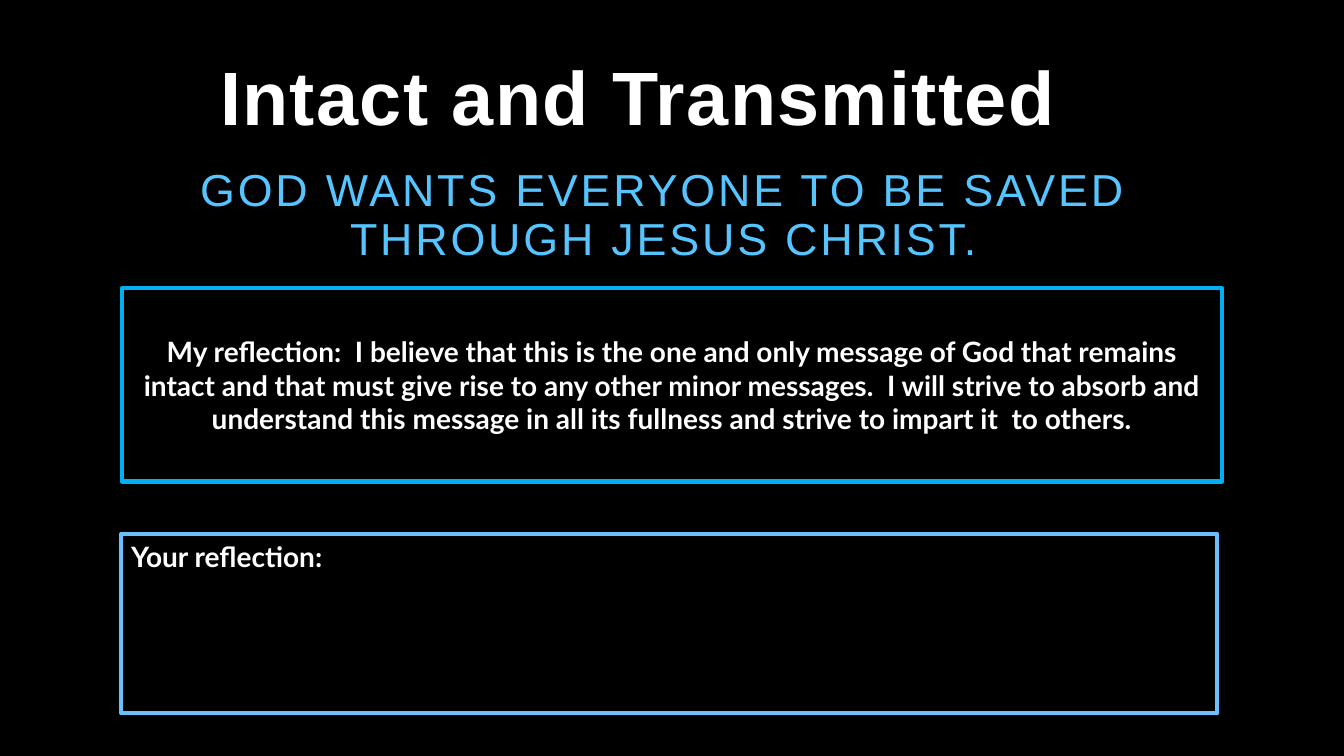
"""Builds the reflection slide "Intact and Transmitted"."""
import pptx
import pptx.dml.color
import pptx.enum.shapes
import pptx.enum.text
import pptx.util

Pt = pptx.util.Pt
ALIGN = pptx.enum.text.PP_ALIGN
ANCHOR = pptx.enum.text.MSO_ANCHOR


def color(value):
    """Turn a hex string into a colour."""
    return pptx.dml.color.RGBColor.from_string(value)


def write(tf, text, font="Lato", size=20, fill="FFFFFF", bold=False,
          align=ALIGN.LEFT, anchor=ANCHOR.TOP, leading=1.0, tracking=0):
    """Fill a text frame with one formatted paragraph."""
    tf.word_wrap = True
    tf.auto_size = pptx.enum.text.MSO_AUTO_SIZE.NONE
    tf.vertical_anchor = anchor
    p = tf.paragraphs[0]
    p.alignment = align
    p.line_spacing = leading
    r = p.add_run()
    r.text = text
    r.font.name = font
    r.font.size = Pt(size)
    r.font.bold = bold
    r.font.color.rgb = color(fill)
    if tracking:
        r._r.get_or_add_rPr().set("spc", str(tracking * 100))


prs = pptx.Presentation()
prs.slide_width, prs.slide_height = Pt(960), Pt(540)
s = prs.slides.add_slide(prs.slide_layouts[5])
s.background.fill.solid()
s.background.fill.fore_color.rgb = color("000000")

title = s.shapes.title
title.left, title.top, title.width, title.height = Pt(150), Pt(29.5), Pt(684), Pt(74)
write(title.text_frame, "Intact and Transmitted", font="Arial", size=54, bold=True,
      anchor=ANCHOR.BOTTOM, leading=0.8, tracking=1)

subtitle = s.shapes.add_textbox(Pt(90), Pt(116.5), Pt(768), Pt(96))
write(subtitle.text_frame, "GOD WANTS EVERYONE TO BE SAVED THROUGH JESUS CHRIST.",
      font="Arial", size=32, fill="56C5FF", align=ALIGN.CENTER, leading=0.9, tracking=2)

reflections = [
    ("My reflection:  I believe that this is the one and only message of God that remains "
     "intact and that must give rise to any other minor messages.  I will strive to absorb "
     "and understand this message in all its fullness and strive to impart it  to others.",
     (87, 206, 786, 138), "00B0F0", ALIGN.CENTER, ANCHOR.MIDDLE),
    ("Your reflection:", (86.5, 381.5, 783, 128), "69BFFF", ALIGN.LEFT, ANCHOR.TOP),
]
for text, box, outline, align, anchor in reflections:
    sp = s.shapes.add_shape(pptx.enum.shapes.MSO_SHAPE.RECTANGLE, *map(Pt, box))
    sp.shadow.inherit = False
    sp.fill.background()
    sp.line.color.rgb = color(outline)
    sp.line.width = Pt(3)
    write(sp.text_frame, text, bold=True, align=align, anchor=anchor)

prs.save("out.pptx")
